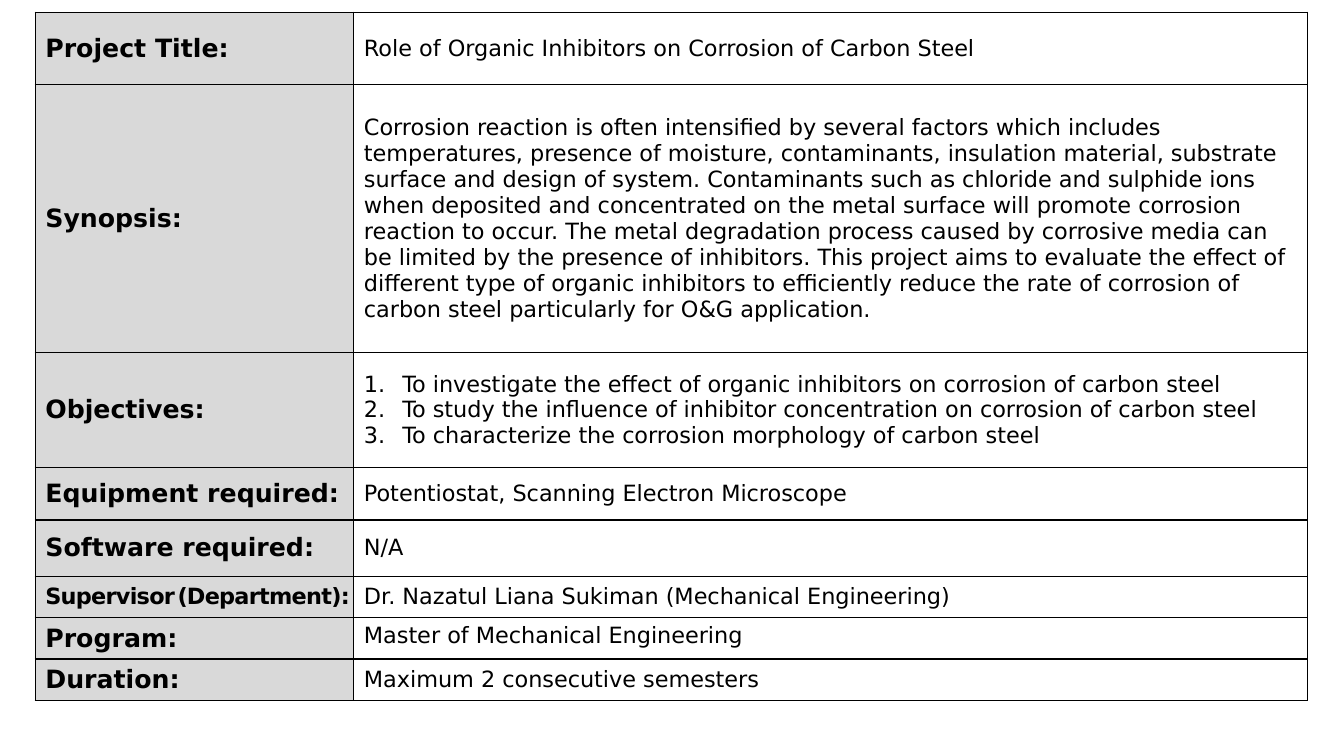
from lxml import etree
from pptx import Presentation
from pptx.dml.color import RGBColor
from pptx.enum.text import MSO_ANCHOR as Anchor
from pptx.oxml.ns import qn
from pptx.util import Inches, Pt

# Content: label (text or sized runs), then the lines of the value
FACTS = [
    ("Project Title:", ["Role of Organic Inhibitors on Corrosion of Carbon Steel"]),
    ("Synopsis:", [
        "Corrosion reaction is often intensified by several factors which includes "
        "temperatures, presence of moisture, contaminants, insulation material, "
        "substrate surface and design of system. Contaminants such as chloride and "
        "sulphide ions when deposited and concentrated on the metal surface will "
        "promote corrosion reaction to occur. The metal degradation process caused by "
        "corrosive media can be limited by the presence of inhibitors. This project "
        "aims to evaluate the effect of different type of organic inhibitors to "
        "efficiently reduce the rate of corrosion of carbon steel particularly for "
        "O&G application."]),
    ("Objectives:", [
        "To investigate the effect of organic inhibitors on corrosion of carbon steel",
        "To study the influence of inhibitor concentration on corrosion of carbon steel",
        "To characterize the corrosion morphology of carbon steel"]),
    ("Equipment required:", ["Potentiostat, Scanning Electron Microscope"]),
    ("Software required:", ["N/A"]),
    ([("Supervisor", 16), (" ", 5), ("(Department):", 16)],
     ["Dr. Nazatul Liana Sukiman (Mechanical Engineering)"]),
    ("Program:", ["Master of Mechanical Engineering"]),
    ("Duration:", ["Maximum 2 consecutive semesters"]),
]
TOP_ROW = 6  # the value in this row sits at the top of its cell

# Grid, in inches
LEFT, TOP = 0.35, 0.12
COLS = [3.16, 9.46]
ROWS = [0.72, 2.66, 1.14, 0.52, 0.56, 0.41, 0.41, 0.41]
INDENT = Inches(0.38)
FACE, BLACK, WHITE, GREY = "DejaVu Sans", "000000", "FFFFFF", "D9D9D9"


def color(code):
    return RGBColor.from_string(code)


def style(font, size, bold):
    font.name, font.size, font.bold = FACE, Pt(size), bold
    font.color.rgb = color(BLACK)


def frame(cell):
    """Draw a thin line on each side of the cell."""
    props = cell._tc.get_or_add_tcPr()
    for place, side in enumerate(("a:lnL", "a:lnR", "a:lnT", "a:lnB")):
        line = etree.Element(qn(side), w=str(Pt(1)))
        fill = etree.SubElement(line, qn("a:solidFill"))
        etree.SubElement(fill, qn("a:srgbClr"), val=BLACK)
        props.insert(place, line)


def number(para):
    props = para._p.get_or_add_pPr()
    props.set("marL", str(INDENT))
    props.set("indent", str(-INDENT))
    etree.SubElement(props, qn("a:buFont"), typeface="+mj-lt")
    etree.SubElement(props, qn("a:buAutoNum"), type="arabicPeriod")


def add_label(cell, label):
    para = cell.text_frame.paragraphs[0]
    if isinstance(label, str):
        para.add_run().text = label
        style(para.font, 18, True)
        return
    # Tight label: smaller runs with narrow letter spacing
    cell.margin_right = 0
    for text, size in label:
        run = para.add_run()
        run.text = text
        style(run.font, size, True)
        run._r.get_or_add_rPr().set("spc", "-50")


def add_value(cell, lines):
    box = cell.text_frame
    for i, line in enumerate(lines):
        para = box.add_paragraph() if i else box.paragraphs[0]
        para.add_run().text = line
        if len(lines) > 1:
            number(para)
        style(para.font, 16, False)


def main():
    deck = Presentation()
    deck.slide_width, deck.slide_height = Inches(13.33), Inches(7.5)
    slide = deck.slides.add_slide(deck.slide_layouts[6])

    # Table grid
    table = slide.shapes.add_table(
        len(ROWS), len(COLS), Inches(LEFT), Inches(TOP),
        Inches(sum(COLS)), Inches(sum(ROWS))).table
    table.first_row = table.horz_banding = False
    for col, width in zip(table.columns, COLS):
        col.width = Inches(width)
    for row, height in zip(table.rows, ROWS):
        row.height = Inches(height)

    # Cells
    for r, (label, lines) in enumerate(FACTS):
        for c, back in enumerate((GREY, WHITE)):
            cell = table.cell(r, c)
            cell.fill.solid()
            cell.fill.fore_color.rgb = color(back)
            cell.vertical_anchor = Anchor.MIDDLE
            frame(cell)
        add_label(table.cell(r, 0), label)
        add_value(table.cell(r, 1), lines)
    table.cell(TOP_ROW, 1).vertical_anchor = Anchor.TOP

    deck.save("out.pptx")


if __name__ == "__main__":
    main()
